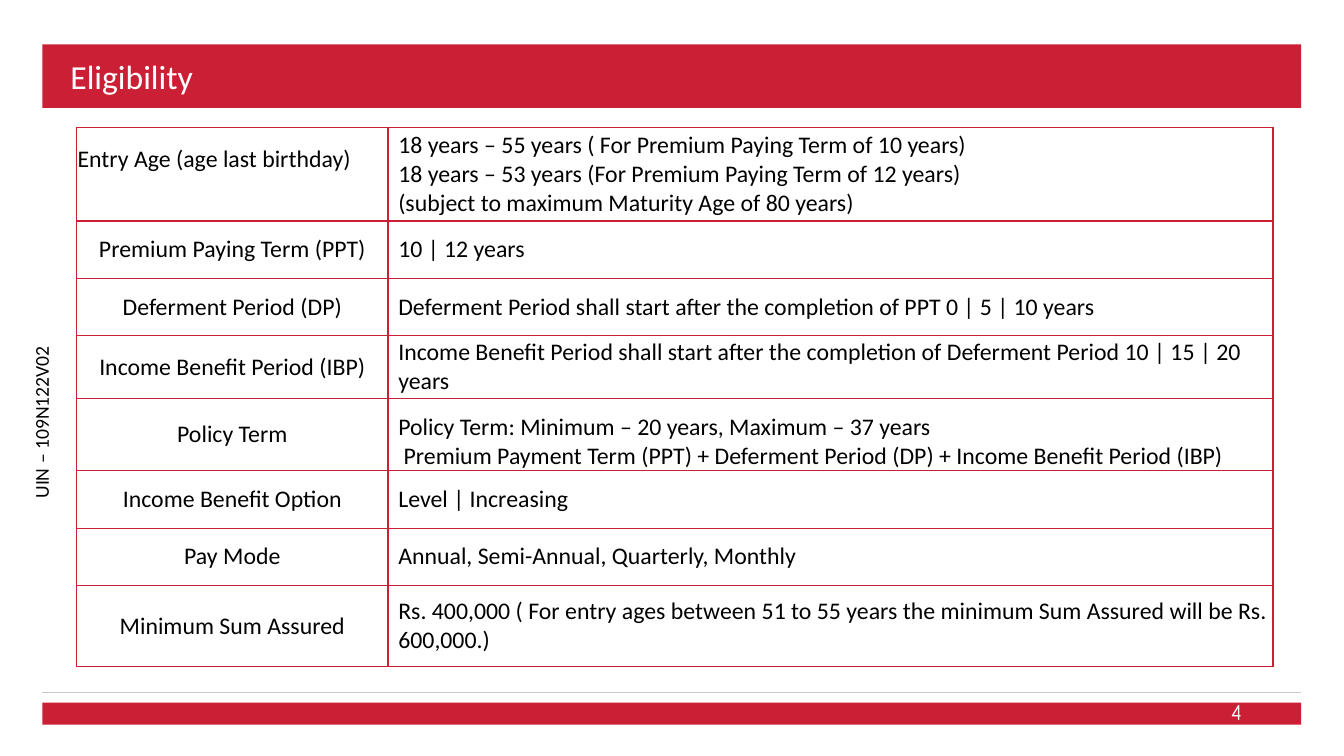
from dataclasses import dataclass

from lxml.etree import SubElement
from pptx import Presentation
from pptx.dml.color import RGBColor
from pptx.enum.shapes import MSO_CONNECTOR, MSO_SHAPE
from pptx.enum.text import MSO_ANCHOR, PP_ALIGN
from pptx.oxml.ns import qn
from pptx.slide import Slide
from pptx.table import _Cell
from pptx.text.text import TextFrame
from pptx.util import Pt

RED, GREY, BLACK, WHITE = "CA1F34", "C7C8CA", "000000", "FFFFFF"
FONT = "Calibri"
BAR_LEFT, BAR_WIDTH = 30.2, 899.3
TABLE_LEFT, TABLE_TOP = 54.7, 90.9
COLUMN_WIDTHS = (222.5, 632.1)
ANSWER_INDENT = 6.6


@dataclass(frozen=True)
class Criterion:
    label: str
    answers: tuple[str, ...]
    height: float
    answer_anchor: MSO_ANCHOR = MSO_ANCHOR.MIDDLE
    label_align: PP_ALIGN = PP_ALIGN.CENTER
    label_lift: float = 0
    last_line_shift: float = 0


@dataclass(frozen=True)
class Caption:
    text: str
    left: float
    top: float
    width: float
    height: float
    size: float
    color: str
    font: str = FONT
    align: PP_ALIGN = PP_ALIGN.LEFT
    anchor: MSO_ANCHOR = MSO_ANCHOR.TOP
    left_inset: float = 7.2
    line_spacing: float = 1.0
    rotation: float = 0


CRITERIA = (
    Criterion("Entry Age (age last birthday)",
              ("18 years – 55 years ( For Premium Paying Term of 10 years)",
               "18 years – 53 years (For Premium Paying Term of 12 years)",
               "(subject to maximum Maturity Age of 80 years)"),
              67, label_align=PP_ALIGN.LEFT, label_lift=20.7),
    Criterion("Premium Paying Term (PPT)", ("10 | 12 years",), 41),
    Criterion("Deferment Period (DP)",
              ("Deferment Period shall start after the completion of PPT 0 | 5 | 10 years",), 41),
    Criterion("Income Benefit Period (IBP)",
              ("Income Benefit Period shall start after the completion of "
               "Deferment Period 10 | 15 | 20 years",), 44.6),
    Criterion("Policy Term",
              ("Policy Term: Minimum – 20 years, Maximum – 37 years",
               "Premium Payment Term (PPT) + Deferment Period (DP) + Income Benefit Period (IBP)"),
              51.8, answer_anchor=MSO_ANCHOR.BOTTOM, last_line_shift=3.8),
    Criterion("Income Benefit Option", ("Level | Increasing",), 41),
    Criterion("Pay Mode", ("Annual, Semi-Annual, Quarterly, Monthly",), 41),
    Criterion("Minimum Sum Assured",
              ("Rs. 400,000 ( For entry ages between 51 to 55 years the minimum "
               "Sum Assured will be Rs. 600,000.)",), 57.6),
)

CAPTIONS = (
    Caption("UIN – 109N122V02", -159.8, 287.3, 380.9, 21.6, 14, BLACK,
            align=PP_ALIGN.CENTER, anchor=MSO_ANCHOR.BOTTOM,
            left_inset=0, line_spacing=0.9, rotation=270),
    Caption("Eligibility", 43.2, 36.7, 616.3, 67.7, 24, WHITE),
    Caption("4", 678.2, 493.9, 216, 28.8, 16, WHITE, font="Comic Neue",
            align=PP_ALIGN.RIGHT, anchor=MSO_ANCHOR.MIDDLE),
)


def rgb(value: str) -> RGBColor:
    return RGBColor.from_string(value)


def write_lines(frame: TextFrame, lines: tuple[str, ...], size: float, color: str,
                font: str, align: PP_ALIGN) -> None:
    for index, line in enumerate(lines):
        paragraph = frame.add_paragraph() if index else frame.paragraphs[0]
        paragraph.alignment = align
        run = paragraph.add_run()
        run.text = line
        run.font.name = font
        run.font.size = Pt(size)
        run.font.color.rgb = rgb(color)


def add_bar(slide: Slide, top: float, height: float) -> None:
    bar = slide.shapes.add_shape(MSO_SHAPE.RECTANGLE, Pt(BAR_LEFT), Pt(top),
                                 Pt(BAR_WIDTH), Pt(height))
    bar.shadow.inherit = False
    bar.fill.solid()
    bar.fill.fore_color.rgb = rgb(RED)
    bar.line.fill.background()


def add_footer_rule(slide: Slide, y: float) -> None:
    rule = slide.shapes.add_connector(MSO_CONNECTOR.STRAIGHT, Pt(BAR_LEFT), Pt(y),
                                      Pt(BAR_LEFT + BAR_WIDTH), Pt(y))
    rule.line.color.rgb = rgb(GREY)
    rule.line.width = Pt(1)
    SubElement(rule._element.spPr, qn("a:effectLst"))


def add_caption(slide: Slide, caption: Caption) -> None:
    box = slide.shapes.add_textbox(Pt(caption.left), Pt(caption.top),
                                   Pt(caption.width), Pt(caption.height))
    box.rotation = caption.rotation
    frame = box.text_frame
    frame.word_wrap = True
    frame.vertical_anchor = caption.anchor
    frame.margin_left = Pt(caption.left_inset)
    write_lines(frame, (caption.text,), caption.size, caption.color,
                caption.font, caption.align)
    frame.paragraphs[0].line_spacing = caption.line_spacing


def style_cell(cell: _Cell, anchor: MSO_ANCHOR) -> None:
    cell.margin_left = cell.margin_right = Pt(0.7)
    cell.margin_top = cell.margin_bottom = Pt(0)
    cell.vertical_anchor = anchor
    properties = cell._tc.get_or_add_tcPr()
    for side in ("lnL", "lnR", "lnT", "lnB"):
        border = SubElement(properties, qn(f"a:{side}"), w=str(Pt(1)))
        fill = SubElement(border, qn("a:solidFill"))
        SubElement(fill, qn("a:srgbClr"), val=RED)
    cell.fill.background()


def add_criteria_table(slide: Slide) -> None:
    table = slide.shapes.add_table(
        len(CRITERIA), len(COLUMN_WIDTHS), Pt(TABLE_LEFT), Pt(TABLE_TOP),
        Pt(sum(COLUMN_WIDTHS)), Pt(sum(c.height for c in CRITERIA))).table
    table.first_row = table.horz_banding = False
    for column, width in zip(table.columns, COLUMN_WIDTHS):
        column.width = Pt(width)
    for index, criterion in enumerate(CRITERIA):
        table.rows[index].height = Pt(criterion.height)
        label, answer = table.cell(index, 0), table.cell(index, 1)
        style_cell(label, MSO_ANCHOR.MIDDLE)
        label.margin_bottom = Pt(criterion.label_lift)
        write_lines(label.text_frame, (criterion.label,), 17, BLACK, FONT,
                    criterion.label_align)
        style_cell(answer, criterion.answer_anchor)
        write_lines(answer.text_frame, criterion.answers, 17, BLACK, FONT, PP_ALIGN.LEFT)
        paragraphs = answer.text_frame.paragraphs
        for number, paragraph in enumerate(paragraphs, start=1):
            shift = criterion.last_line_shift if number == len(paragraphs) else 0
            properties = paragraph._p.get_or_add_pPr()
            properties.set("marL", str(Pt(ANSWER_INDENT + shift)))
            properties.set("indent", "0")


def main() -> None:
    deck = Presentation()
    deck.slide_width, deck.slide_height = Pt(960), Pt(540)
    slide = deck.slides.add_slide(deck.slide_layouts[6])
    add_bar(slide, top=31.7, height=45.4)
    add_bar(slide, top=501.8, height=15.8)
    add_footer_rule(slide, y=494.6)
    add_criteria_table(slide)
    for caption in CAPTIONS:
        add_caption(slide, caption)
    deck.save("out.pptx")


if __name__ == "__main__":
    main()
